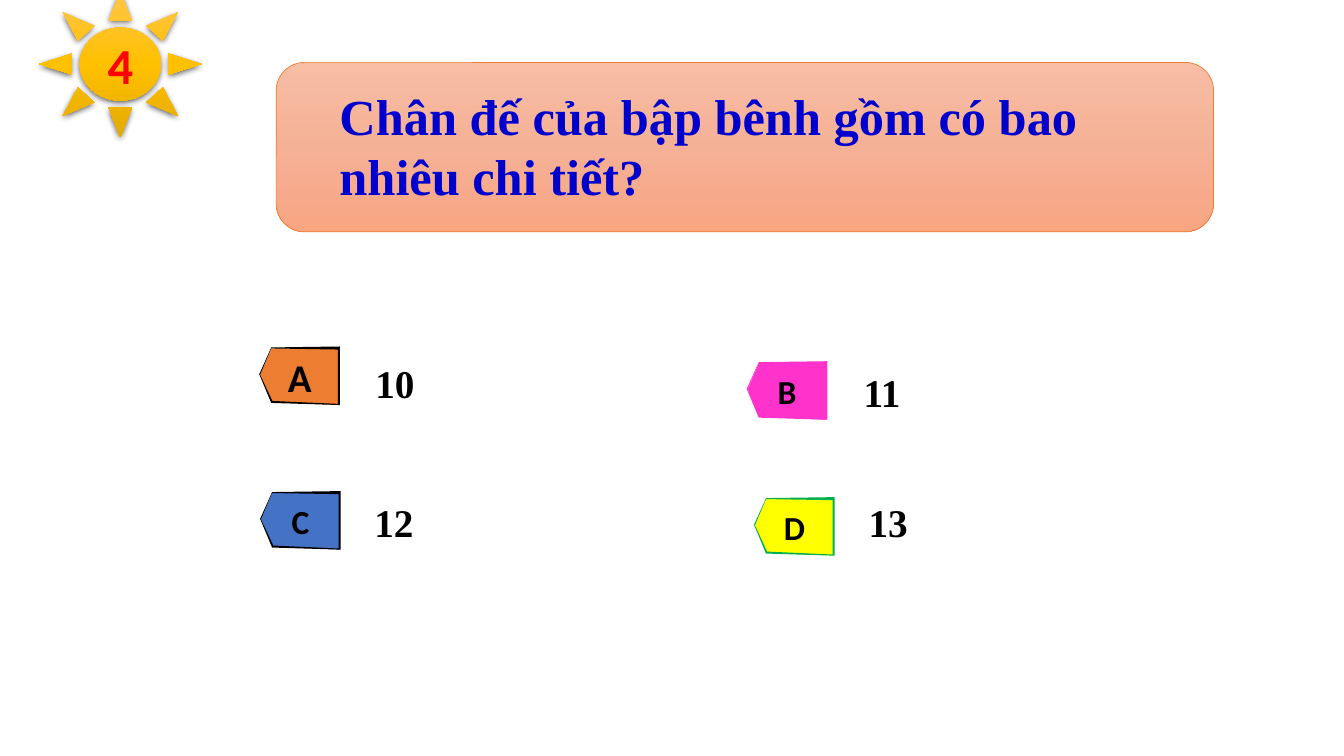
from copy import deepcopy

from lxml import etree
from pptx import Presentation
from pptx.dml.color import RGBColor
from pptx.enum.shapes import MSO_SHAPE
from pptx.enum.text import MSO_ANCHOR, MSO_AUTO_SIZE, PP_ALIGN
from pptx.oxml.ns import qn
from pptx.util import Pt

SUN, CALLOUT = MSO_SHAPE.SUN, MSO_SHAPE.ROUNDED_RECTANGULAR_CALLOUT
ROUND_RECT = MSO_SHAPE.ROUNDED_RECTANGLE
LEFT, CENTER, RIGHT = PP_ALIGN.LEFT, PP_ALIGN.CENTER, PP_ALIGN.RIGHT
MIDDLE = MSO_ANCHOR.MIDDLE
GROW = MSO_AUTO_SIZE.SHAPE_TO_FIT_TEXT
SANS, SERIF = "Calibri", "Times New Roman"

# Answer tag outlines, relative to the tag's top left corner
TAG_FACE = [(56.9, 1.4), (56.9, 41.8), (8.6, 39.6), (0.7, 20.2), (8.6, 1.4)]
TAG_RIM = [(57.6, 0), (57.6, 41.8), (8.6, 40.3), (0, 19.8), (8.6, 0.7)]
TAG_HOLE = [(8.6, 1.4), (0.7, 20.2), (9.4, 38.9), (56.2, 41), (56.2, 2.2)]


def rgb(color):
    return RGBColor.from_string(color)


def set_text(s, text, font, size, color, align):
    tf = s.text_frame
    tf.word_wrap = True
    tf.text = text
    p = tf.paragraphs[0]
    p.alignment = align
    f = p.runs[0].font
    f.name, f.size, f.bold = font, Pt(size), True
    f.color.rgb = rgb(color)
    return tf


def add_shape(shapes, kind, x, y, w, h):
    s = shapes.add_shape(kind, Pt(x), Pt(y), Pt(w), Pt(h))
    s.shadow.inherit = False
    s.fill.background()
    s.line.fill.background()
    return s


def fill_gradient(s, colors):
    """Top-to-bottom gradient with three evenly spaced stops."""
    s.fill.gradient()
    s.fill.gradient_angle = 270
    first = s._element.spPr.find(".//" + qn("a:gs"))
    first.addnext(deepcopy(first))
    for i, (stop, color) in enumerate(zip(s.fill.gradient_stops, colors)):
        stop.position = i / 2
        stop.color.rgb = rgb(color)


def add_shadow(s):
    effects = s._element.spPr.find(qn("a:effectLst"))
    shadow = etree.SubElement(effects, qn("a:outerShdw"), blurRad=str(Pt(4.5)),
                              dist=str(Pt(1.5)), dir="5400000", rotWithShape="0")
    color = etree.SubElement(shadow, qn("a:srgbClr"), val="000000")
    etree.SubElement(color, qn("a:alpha"), val="63000")


def add_outline(shapes, x, y, contours, color):
    contours = [[(Pt(x + dx), Pt(y + dy)) for dx, dy in c] for c in contours]
    builder = shapes.build_freeform(*contours[0][0])
    builder.add_line_segments(contours[0][1:])
    for contour in contours[1:]:
        builder.move_to(*contour[0])
        builder.add_line_segments(contour[1:])
    s = builder.convert_to_shape()
    s.shadow.inherit = False
    s.fill.solid()
    s.fill.fore_color.rgb = rgb(color)
    s.line.fill.background()
    return s


def add_tag(shapes, letter, x, y, face, rim, size):
    group = shapes.add_group_shape()
    s = add_outline(group.shapes, x, y, [TAG_FACE], face)
    tf = set_text(s, letter, SANS, size, "000000", CENTER)
    tf.vertical_anchor = MIDDLE
    tf.margin_left = tf.margin_right = tf.margin_top = tf.margin_bottom = Pt(7.2)
    add_outline(group.shapes, x, y, [TAG_RIM, TAG_HOLE], rim)


def add_text(shapes, text, x, y, w, h, size, color, align=LEFT):
    s = shapes.add_textbox(Pt(x), Pt(y), Pt(w), Pt(h))
    set_text(s, text, SERIF, size, color, align).auto_size = GROW


def main():
    prs = Presentation()
    prs.slide_width, prs.slide_height = Pt(960), Pt(540)
    shapes = prs.slides.add_slide(prs.slide_layouts[6]).shapes

    # Sun with the question number
    sun = add_shape(shapes, SUN, 28, -6.4, 116, 104.4)
    fill_gradient(sun, ["FFC64B", "FFC000", "E3AB00"])
    add_shadow(sun)
    number = add_shape(shapes, CALLOUT, 56.2, 23, 59.8, 45.4)
    number.adjustments[0], number.adjustments[1] = 0.655, 0.321
    set_text(number, "4", SANS, 36, "FF0000", CENTER).vertical_anchor = MIDDLE

    # Question panel
    panel = add_shape(shapes, ROUND_RECT, 197.3, 44.6, 669.6, 121)
    fill_gradient(panel, ["F7BDA5", "F5B196", "F8A582"])
    panel.line.color.rgb = rgb("ED7D31")
    panel.line.width = Pt(0.5)
    add_text(shapes, "Chân đế của bập bênh gồm có bao nhiêu chi tiết?",
             235.4, 56.9, 594, 94.3, 36, "0000CC")

    # Answer tags: letter, left, top, face, rim, text size
    for tag in [("C", 185.8, 350.8, "4472C4", "000000", 24),
                ("A", 185.2, 247.5, "ED7D31", "000000", 28),
                ("D", 538.6, 355.1, "FFFF00", "00B050", 24),
                ("B", 533.4, 258, "FF33CC", "FF33CC", 24)]:
        add_tag(shapes, *tag)

    # Answers: text, left, top, width, alignment
    for text, x, y, w, align in [("10", 208.8, 253.4, 94.3, RIGHT),
                                 ("11", 609.8, 259.2, 219.6, LEFT),
                                 ("12", 67.7, 352.1, 234.7, RIGHT),
                                 ("13", 613.4, 352.1, 215.3, LEFT)]:
        add_text(shapes, text, x, y, w, 41, 28, "000000", align)

    prs.save("out.pptx")


if __name__ == "__main__":
    main()
